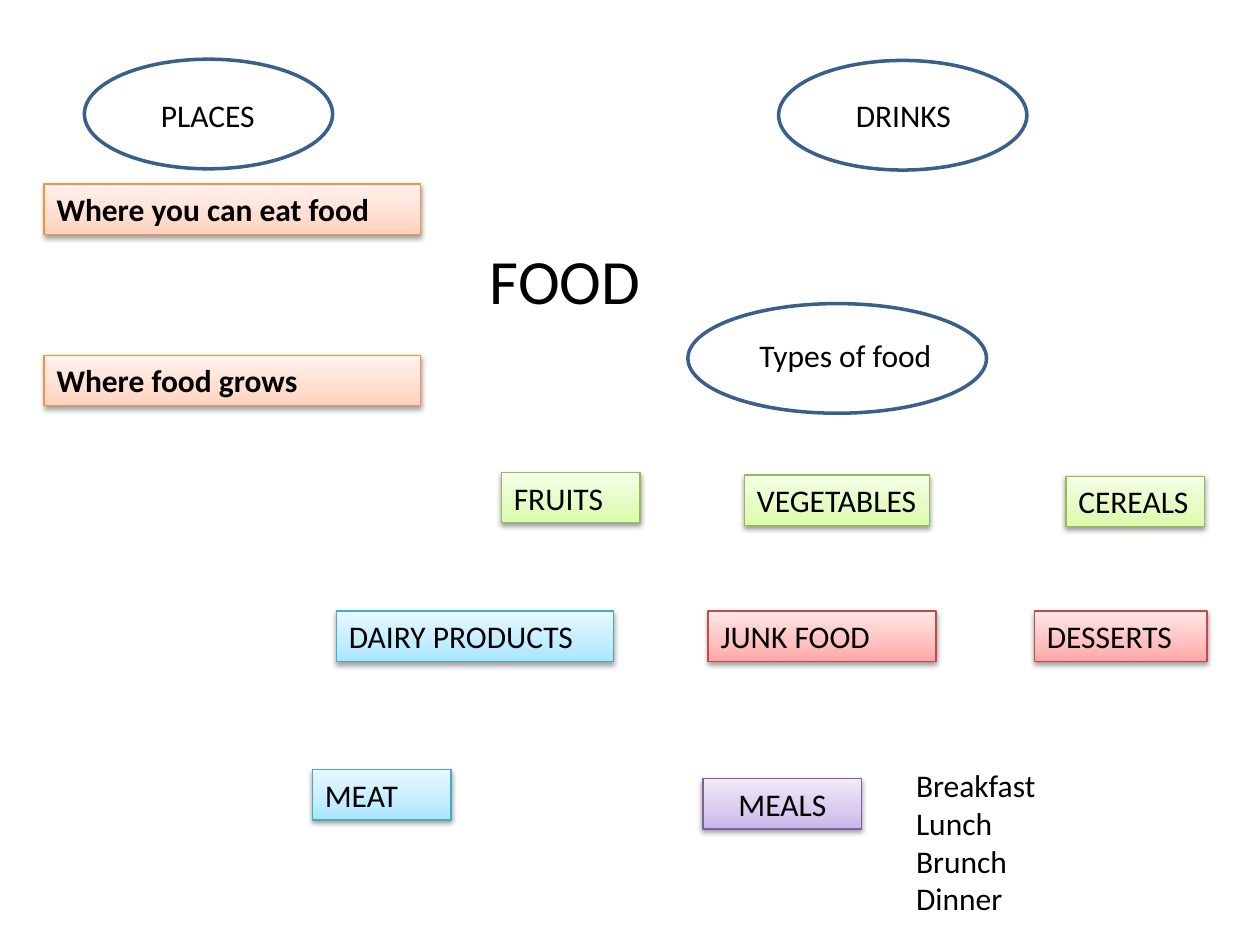
from pptx import Presentation
from pptx.dml.color import RGBColor
from pptx.enum.shapes import MSO_SHAPE
from pptx.enum.text import MSO_ANCHOR, MSO_AUTO_SIZE, PP_ALIGN
from pptx.oxml import parse_xml
from pptx.oxml.ns import nsdecls
from pptx.util import Inches, Pt

LABEL_HEIGHT = 0.4
OVAL_HEIGHT = 0.87
OVAL_LINE = "3A5F8C"

# Line colour, then the gradient from bottom to top
ORANGE = ("F69240", ("FFD2BD", "FFDED0", "FFF2ED"))
GREEN = ("98B955", ("DAFDA7", "E4FCC2", "F5FFE7"))
BLUE = ("46AAC5", ("A7E6FF", "C1EDFF", "E7F8FF"))
RED = ("BF4C48", ("FFA6A5", "FFC0BF", "FFE7E7"))
PURPLE = ("7D60A0", ("C9B5E8", "D8CBEE", "F0EAF9"))
STOPS = (0, 35, 100)

# Left, top, width
OVALS = [(0.67, 0.47, 1.97), (6.18, 0.48, 1.97), (5.46, 2.41, 2.37)]
TOPICS = [
    ("PLACES", 0.98, 0.71, 1.34),
    ("DRINKS", 6.5, 0.71, 1.34),
    ("Types of food", 5.59, 2.62, 2.24),
]
PLACES = [("Where you can eat food", 1.46), ("Where food grows", 2.82)]
FOOD_GROUPS = [
    ("FRUITS", 3.98, 3.75, 1.1, GREEN),
    ("VEGETABLES", 5.91, 3.77, 1.47, GREEN),
    ("CEREALS", 8.46, 3.78, 1.1, GREEN),
    ("DAIRY PRODUCTS", 2.67, 4.85, 2.2, BLUE),
    ("JUNK FOOD", 5.62, 4.85, 1.81, RED),
    ("DESSERTS", 8.21, 4.85, 1.37, RED),
    ("MEAT", 2.48, 6.11, 1.1, BLUE),
]
MEALS = ["Breakfast", "Lunch", "Brunch", "Dinner"]


def color(hex_value):
    return RGBColor.from_string(hex_value)


def write(shape, text, size=18, bold=False, align=PP_ALIGN.LEFT):
    frame = shape.text_frame
    frame.text = text
    frame.word_wrap = True
    frame.auto_size = MSO_AUTO_SIZE.SHAPE_TO_FIT_TEXT
    for paragraph in frame.paragraphs:
        paragraph.alignment = align
        paragraph.space_before = Pt(0)
        for run in paragraph.runs:
            run.font.name = "Calibri"
            run.font.size = Pt(size)
            run.font.bold = bold
            run.font.color.rgb = color("000000")


def place(shape, left, top, width, height):
    shape.left, shape.top = Inches(left), Inches(top)
    shape.width, shape.height = Inches(width), Inches(height)


def add_oval(slide, left, top, width):
    oval = slide.shapes.add_shape(
        MSO_SHAPE.OVAL, Inches(left), Inches(top), Inches(width), Inches(OVAL_HEIGHT))
    oval.shadow.inherit = False
    oval.fill.background()
    oval.line.color.rgb = color(OVAL_LINE)
    oval.line.width = Pt(2)


def add_topic(slide, text, left, top, width):
    topic = slide.shapes.add_textbox(
        Inches(left), Inches(top), Inches(width), Inches(LABEL_HEIGHT))
    write(topic, text, align=PP_ALIGN.CENTER)


def add_label(slide, text, left, top, width, theme, **text_format):
    """Add a gradient box with a soft shadow below it."""
    line_color, shades = theme
    label = slide.shapes.add_shape(
        MSO_SHAPE.RECTANGLE, Inches(left), Inches(top), Inches(width), Inches(LABEL_HEIGHT))
    stops = "".join(
        f'<a:gs pos="{stop * 1000}"><a:srgbClr val="{shade}"/></a:gs>'
        for stop, shade in zip(STOPS, shades))
    properties = label._element.spPr
    properties.append(parse_xml(
        f'<a:gradFill {nsdecls("a")} rotWithShape="1"><a:gsLst>{stops}</a:gsLst>'
        '<a:lin ang="16200000" scaled="1"/></a:gradFill>'))
    label.line.color.rgb = color(line_color)
    label.line.width = Pt(0.75)
    properties.append(parse_xml(
        f'<a:effectLst {nsdecls("a")}><a:outerShdw blurRad="{Pt(3.1)}" dist="{Pt(1.6)}" '
        'dir="5400000" rotWithShape="0"><a:srgbClr val="000000">'
        '<a:alpha val="38000"/></a:srgbClr></a:outerShdw></a:effectLst>'))
    label.text_frame.vertical_anchor = MSO_ANCHOR.TOP
    write(label, text, **text_format)


def fill_meal_list(body):
    place(body, 7.17, 6.03, 1.73, 1.31)
    write(body, "\n".join(MEALS))
    for paragraph in body.text_frame.paragraphs:
        properties = paragraph._p.get_or_add_pPr()
        properties.set("marL", "0")
        properties.set("indent", "0")
        properties.append(parse_xml(f'<a:buNone {nsdecls("a")}/>'))


def main():
    presentation = Presentation()
    presentation.slide_width, presentation.slide_height = Inches(10), Inches(7.5)
    slide = presentation.slides.add_slide(presentation.slide_layouts[1])

    title = slide.shapes.title
    place(title, 3.58, 1.86, 1.81, 0.71)
    write(title, "FOOD", size=36, align=PP_ALIGN.CENTER)

    for oval in OVALS:
        add_oval(slide, *oval)
    for topic in TOPICS:
        add_topic(slide, *topic)
    for text, top in PLACES:
        add_label(slide, text, 0.35, top, 2.99, ORANGE, bold=True)
    for group in FOOD_GROUPS:
        add_label(slide, *group)
    add_label(slide, "MEALS", 5.58, 6.18, 1.26, PURPLE, align=PP_ALIGN.CENTER)
    fill_meal_list(slide.placeholders[1])

    presentation.save("out.pptx")


if __name__ == "__main__":
    main()
